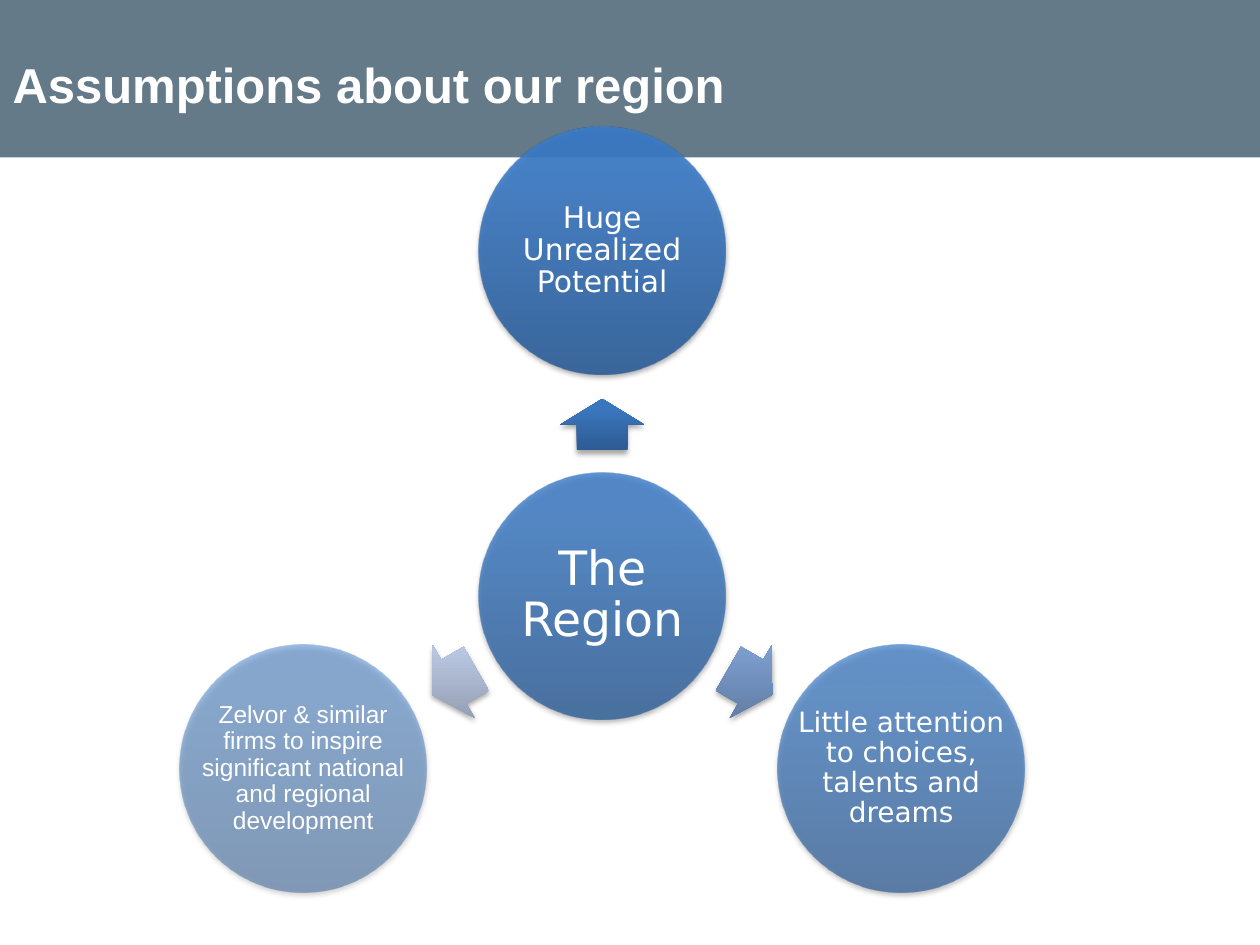
from math import cos, radians, sin

from lxml import etree
from pptx import Presentation
from pptx.dml.color import RGBColor
from pptx.enum.shapes import MSO_SHAPE
from pptx.enum.text import MSO_ANCHOR, PP_ALIGN
from pptx.oxml.ns import qn
from pptx.util import Inches, Pt

RECT, OVAL, ARROW = MSO_SHAPE.RECTANGLE, MSO_SHAPE.OVAL, MSO_SHAPE.RIGHT_ARROW
MIDDLE, LEFT, CENTER = MSO_ANCHOR.MIDDLE, PP_ALIGN.LEFT, PP_ALIGN.CENTER

HUES = {"banner": "647A88", "text": "FFFFFF", "shadow": "000000"}
BALL = ("2F5F99", "3D7CC7", "3A7CCB")
MID_X, MID_Y = 4.78, 4.73
DIAM = 1.96
ARROW_W, ARROW_H = 0.41, 0.67
ARROW_R, BALL_R = 1.36, 2.74
SPOKES = [
    (270, "Huge Unrealized Potential", 17, "DejaVu Sans", 90,
     ("2D5B92", "3A76BE", "3876C2")),
    (30, "Little attention to choices, talents and dreams", 16, "DejaVu Sans", 70,
     ("5E789E", "7B9CCD", "7A9CCF")),
    (150, "Zelvor & similar firms to inspire significant national and regional "
     "development", 14, "Arial", 50, ("8E98AC", "B8C6DF", "B8C6E1")),
]


class Deck:
    """Holds the style and the current slide, and draws each kind of element."""

    def __init__(self):
        self.prs = Presentation()
        self.prs.slide_width, self.prs.slide_height = Inches(10), Inches(7.5)
        self.slide = self.prs.slides.add_slide(self.prs.slide_layouts[5])
        self.tree = self.slide.shapes

    def tint(self, node, hue, alpha):
        color = etree.SubElement(node, qn("a:srgbClr"), val=hue)
        if alpha < 100:
            etree.SubElement(color, qn("a:alpha"), val=str(alpha * 1000))

    def shade(self, shape, hues, alpha):
        shape.fill.gradient()
        grad = shape._element.spPr.find(qn("a:gradFill"))
        grad.set("rotWithShape", "0")
        for part in list(grad):
            grad.remove(part)
        stops = etree.SubElement(grad, qn("a:gsLst"))
        for place, hue in zip((0, 80, 100), hues):
            stop = etree.SubElement(stops, qn("a:gs"), pos=str(place * 1000))
            self.tint(stop, hue, alpha)
        etree.SubElement(grad, qn("a:lin"), ang="16200000", scaled="0")

    def shape(self, kind, x, y, w, h, hues, alpha=100, turn=0):
        shape = self.tree.add_shape(
            kind, Inches(x - w / 2), Inches(y - h / 2), Inches(w), Inches(h))
        shape.rotation = turn
        shape.line.fill.background()
        shape.shadow.inherit = False
        self.shade(shape, hues, alpha)
        drop = etree.SubElement(
            shape._element.spPr.find(qn("a:effectLst")), qn("a:outerShdw"),
            blurRad=str(Pt(3.1)), dist=str(Pt(1.8)), dir="5400000", rotWithShape="0")
        self.tint(drop, HUES["shadow"], 35)
        return shape

    def label(self, frame, text, align, look):
        frame.word_wrap = True
        frame.vertical_anchor = MIDDLE
        frame.text = text
        para = frame.paragraphs[0]
        para.alignment = align
        font = para.runs[0].font
        for name, value in look.items():
            setattr(font, name, value)
        font.color.rgb = RGBColor.from_string(HUES["text"])
        return para

    def ball(self, x, y, text, size, face, alpha):
        self.shape(OVAL, x, y, DIAM, DIAM, BALL, alpha)
        box = self.tree.add_textbox(
            Inches(x - DIAM / 2), Inches(y - DIAM / 2), Inches(DIAM), Inches(DIAM))
        frame = box.text_frame
        frame.margin_left = frame.margin_right = Inches(0.12)
        frame.margin_top = frame.margin_bottom = Inches(0.02)
        look = {"size": Pt(size), "name": face}
        self.label(frame, text, CENTER, look).line_spacing = 0.9

    def arrow(self, x, y, turn, hues):
        shape = self.shape(ARROW, x, y, ARROW_W, ARROW_H, hues, turn=turn)
        shape.adjustments[0] = 0.6
        shape.adjustments[1] = 0.5

    def banner(self):
        band = self.tree.add_shape(RECT, 0, 0, Inches(10), Inches(1.25))
        band.fill.solid()
        band.fill.fore_color.rgb = RGBColor.from_string(HUES["banner"])
        band.line.fill.background()
        band.shadow.inherit = False

    def title(self, text):
        title = self.tree.title
        spot = {"left": 0, "top": 0.08, "width": 9, "height": 1.17}
        for name, value in spot.items():
            setattr(title, name, Inches(value))
        look = {"size": Pt(28), "name": "Arial", "bold": True}
        self.label(title.text_frame, text, LEFT, look)
        self.tree._spTree.append(title._element)


def main():
    deck = Deck()
    deck.banner()
    deck.ball(MID_X, MID_Y, "The Region", 27, "DejaVu Sans", 80)
    for turn, text, size, face, alpha, hues in SPOKES:
        dx, dy = cos(radians(turn)), sin(radians(turn))
        deck.arrow(MID_X + ARROW_R * dx, MID_Y + ARROW_R * dy, turn, hues)
        deck.ball(MID_X + BALL_R * dx, MID_Y + BALL_R * dy, text, size, face, alpha)
    deck.title("Assumptions about our region")
    deck.prs.save("out.pptx")


if __name__ == "__main__":
    main()
